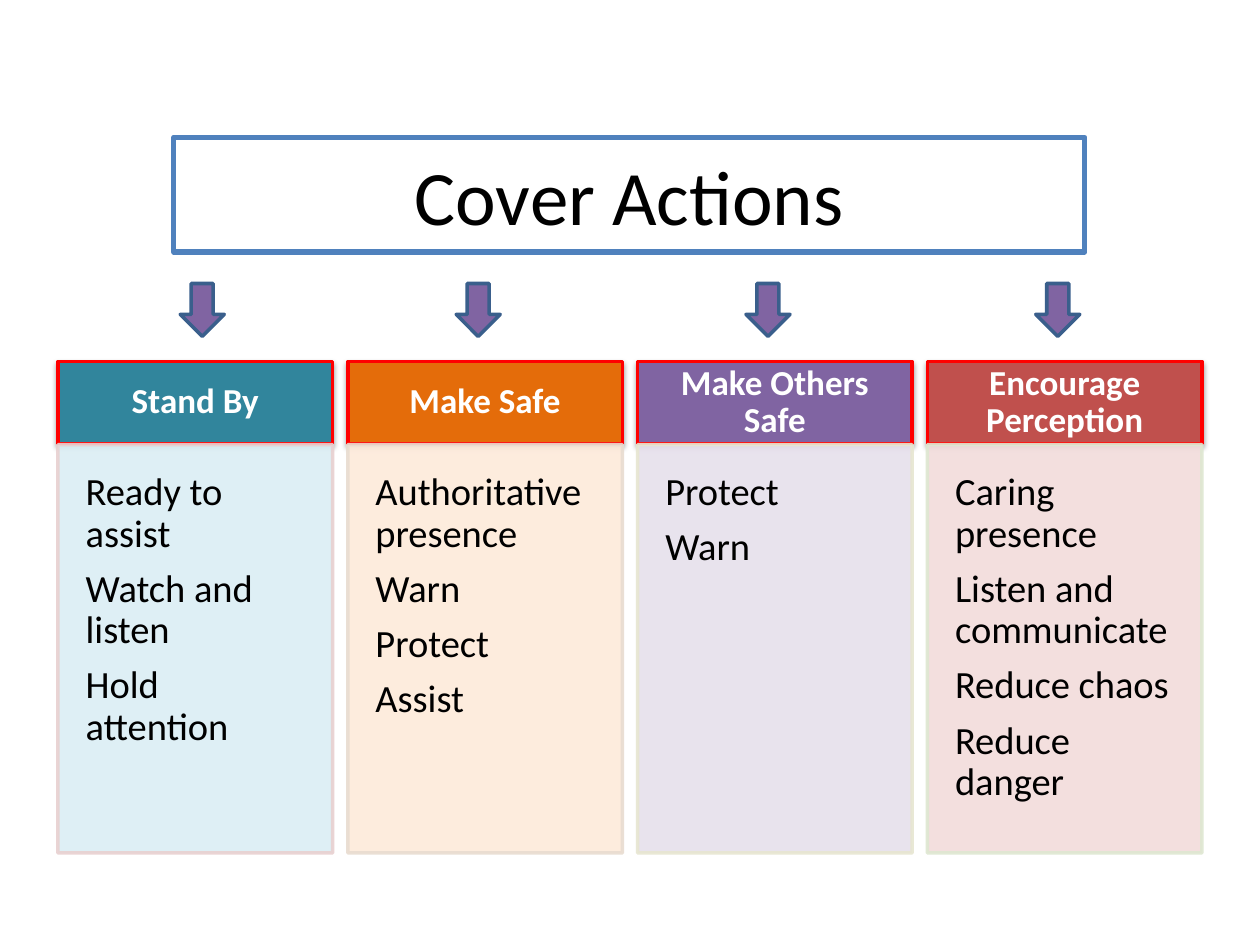
from lxml import etree
from pptx import Presentation
from pptx.dml.color import RGBColor
from pptx.enum.shapes import MSO_SHAPE
from pptx.enum.text import MSO_ANCHOR, MSO_AUTO_SIZE, PP_ALIGN
from pptx.oxml import parse_xml
from pptx.oxml.ns import nsdecls, qn
from pptx.util import Inches, Pt

COLORS = {
    "black": "000000", "white": "FFFFFF", "title_line": "4F81BD",
    "header_line": "FF0000", "arrow": "8064A2", "arrow_line": "3A5F8C",
    "teal": "31859C", "teal_tint": "DBEEF4", "teal_edge": "E8D0D0",
    "orange": "E46C0A", "orange_tint": "FDEADA", "orange_edge": "E8DCD0",
    "purple": "8064A2", "purple_tint": "E6E0EC", "purple_edge": "E7E6D1",
    "red": "C0504D", "red_tint": "F2DCDB", "red_edge": "DEE7D1",
}

COLUMNS = [
    ("Stand By", "teal", 1.43,
     ["Ready to assist", "Watch and listen", "Hold attention"]),
    ("Make Safe", "orange", 3.62,
     ["Authoritative presence", "Warn", "Protect", "Assist"]),
    ("Make Others Safe", "purple", 5.92, ["Protect", "Warn"]),
    ("Encourage Perception", "red", 8.22,
     ["Caring presence", "Listen and communicate", "Reduce chaos", "Reduce danger"]),
]
LEFT, PITCH, WIDTH = 0.46, 2.3, 2.18
HEADER_TOP, HEADER_HEIGHT = 2.87, 0.65
PANEL_TOP, PANEL_HEIGHT = 3.53, 3.24


class SlideBuilder:
    font = "Calibri"

    def __init__(self, slide):
        self.slide = slide

    def color(self, name):
        return RGBColor.from_string(COLORS[name])

    def outline(self, sp, color, width):
        sp.line.color.rgb = self.color(color)
        sp.line.width = Pt(width)

    def run(self, p, text, size, color, bold=False):
        r = p.add_run()
        r.text = text
        r.font.name = self.font
        r.font.size = Pt(size)
        r.font.bold = bold
        r.font.color.rgb = self.color(color)

    def title(self, text, left, top, width, height):
        sp = self.slide.shapes.title
        sp.left, sp.top = Inches(left), Inches(top)
        sp.width, sp.height = Inches(width), Inches(height)
        self.outline(sp, "title_line", 3)
        tf = sp.text_frame
        tf.auto_size = MSO_AUTO_SIZE.NONE
        tf.vertical_anchor = MSO_ANCHOR.MIDDLE
        p = tf.paragraphs[0]
        p.alignment = PP_ALIGN.CENTER
        self.run(p, text, 44, "black")

    def shape(self, kind, left, top, width, height, fill, line):
        sp = self.slide.shapes.add_shape(
            kind, Inches(left), Inches(top), Inches(width), Inches(height))
        sp.shadow.inherit = False
        sp.fill.solid()
        sp.fill.fore_color.rgb = self.color(fill)
        self.outline(sp, line, 2)
        return sp

    def arrow(self, left, top):
        self.shape(MSO_SHAPE.DOWN_ARROW, left, top, 0.35, 0.42, "arrow", "arrow_line")

    def header(self, left, text, fill):
        sp = self.shape(MSO_SHAPE.RECTANGLE, left, HEADER_TOP, WIDTH, HEADER_HEIGHT,
                        fill, "header_line")
        effects = sp._element.spPr.find(qn("a:effectLst"))
        effects.append(parse_xml(
            f'<a:outerShdw {nsdecls("a")} blurRad="40000" dist="20000" dir="5400000" '
            f'rotWithShape="0"><a:srgbClr val="{COLORS["black"]}">'
            '<a:alpha val="38000"/></a:srgbClr></a:outerShdw>'))
        tf = sp.text_frame
        tf.word_wrap = True
        tf.vertical_anchor = MSO_ANCHOR.MIDDLE
        tf.margin_left = tf.margin_right = Inches(0.17)
        tf.margin_top = tf.margin_bottom = 0
        p = tf.paragraphs[0]
        p.alignment = PP_ALIGN.CENTER
        p.line_spacing = 0.9
        self.run(p, text, 20, "white", bold=True)

    def panel(self, left, items, fill, line):
        sp = self.shape(MSO_SHAPE.RECTANGLE, left, PANEL_TOP, WIDTH, PANEL_HEIGHT,
                        fill, line)
        for clr in sp._element.spPr.iter(qn("a:srgbClr")):
            etree.SubElement(clr, qn("a:alpha")).set("val", "90000")
        tf = sp.text_frame
        tf.word_wrap = True
        tf.vertical_anchor = MSO_ANCHOR.TOP
        tf.margin_left = tf.margin_right = Inches(0.22)
        tf.margin_top = tf.margin_bottom = Inches(0.22)
        for i, item in enumerate(items):
            p = tf.add_paragraph() if i else tf.paragraphs[0]
            p.alignment = PP_ALIGN.LEFT
            p.line_spacing = 0.9
            p.space_after = Pt(7.7)
            self.run(p, item, 22, "black")


def main():
    prs = Presentation()
    prs.slide_width, prs.slide_height = Inches(10), Inches(7.5)
    s = SlideBuilder(prs.slides.add_slide(prs.slide_layouts[5]))
    s.title("Cover Actions", 1.38, 1.09, 7.23, 0.91)
    for i, (heading, hue, arrow_left, items) in enumerate(COLUMNS):
        left = LEFT + i * PITCH
        s.header(left, heading, hue)
        s.panel(left, items, f"{hue}_tint", f"{hue}_edge")
        s.arrow(arrow_left, 2.25)
    prs.save("out.pptx")


if __name__ == "__main__":
    main()
